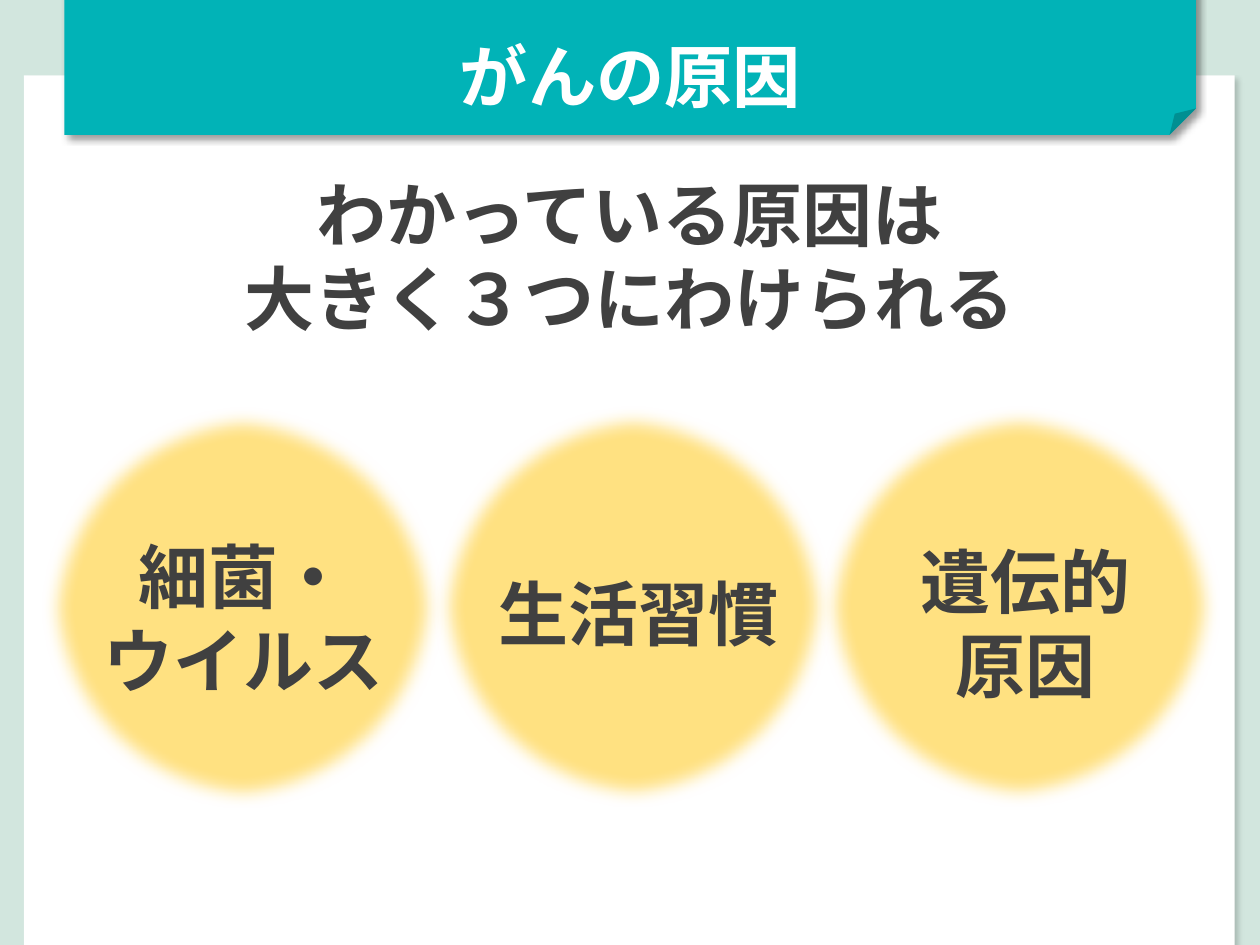
from dataclasses import dataclass

from lxml import etree
from pptx import Presentation
from pptx.dml.color import RGBColor
from pptx.enum.lang import MSO_LANGUAGE_ID
from pptx.enum.shapes import MSO_SHAPE
from pptx.enum.text import MSO_AUTO_SIZE, PP_ALIGN
from pptx.oxml.ns import qn
from pptx.util import Cm, Pt

RECTANGLE = MSO_SHAPE.RECTANGLE
FOLDED_CORNER = MSO_SHAPE.FOLDED_CORNER
OVAL = MSO_SHAPE.OVAL
CENTER = PP_ALIGN.CENTER
FIT_TO_TEXT = MSO_AUTO_SIZE.SHAPE_TO_FIT_TEXT
JAPANESE = MSO_LANGUAGE_ID.JAPANESE

FONT = "TeX Gyre Adventor"
COLORS = {
    "background": "D2E6DE",
    "sheet": "FFFFFF",
    "banner": "01B3B7",
    "title": "FFFFFF",
    "text": "404040",
    "circle": "FFE181",
    "shadow": "000000",
}
CIRCLE_SIZE = 8.1
SOFT_EDGE = 10


@dataclass
class Box:
    """Position and size in centimetres."""
    left: float
    top: float
    width: float
    height: float

    def lengths(self) -> tuple:
        return Cm(self.left), Cm(self.top), Cm(self.width), Cm(self.height)


@dataclass
class Shadow:
    """Opacity in percent, blur and distance in points."""
    opacity: int
    blur: float
    distance: float


@dataclass
class Cause:
    label: str
    circle_left: float
    circle_top: float
    label_box: Box


CAUSES = [
    Cause("生活習慣", 8.71, 8.18, Box(9.65, 11.38, 6.43, 1.96)),
    Cause("細菌・\nウイルス", 0.84, 8.2, Box(1.12, 10.64, 7.57, 3.68)),
    Cause("遺伝的\n原因", 16.51, 8.18, Box(17.45, 10.74, 6.43, 3.68)),
]


def rgb(role: str) -> RGBColor:
    return RGBColor.from_string(COLORS[role])


def add_plain_shape(shapes, kind, box: Box, role: str):
    """Add a filled shape without outline or shadow."""
    shape = shapes.add_shape(kind, *box.lengths())
    shape.shadow.inherit = False
    shape.fill.solid()
    shape.fill.fore_color.rgb = rgb(role)
    shape.line.fill.background()
    return shape


def add_effect(shape, tag: str, **attributes: str):
    effects = shape._element.spPr.find(qn("a:effectLst"))
    return etree.SubElement(effects, qn(tag), attributes)


def cast_shadow(shape, shadow: Shadow) -> None:
    outer = add_effect(
        shape, "a:outerShdw",
        blurRad=str(Pt(shadow.blur)), dist=str(Pt(shadow.distance)),
        dir="2700000", algn="tl", rotWithShape="0",
    )
    color = etree.SubElement(outer, qn("a:srgbClr"), val=COLORS["shadow"])
    etree.SubElement(color, qn("a:alpha"), val=str(shadow.opacity * 1000))


def add_text(shapes, text: str, box: Box, size: float, role: str) -> None:
    frame = shapes.add_textbox(*box.lengths()).text_frame
    frame.word_wrap = True
    frame.auto_size = FIT_TO_TEXT
    frame.text = text
    for paragraph in frame.paragraphs:
        paragraph.alignment = CENTER
        for run in paragraph.runs:
            font = run.font
            font.size = Pt(size)
            font.bold = True
            font.name = FONT
            font.language_id = JAPANESE
            font.color.rgb = rgb(role)
            etree.SubElement(run._r.get_or_add_rPr(), qn("a:ea"), typeface=FONT)


def add_cause(slide, cause: Cause) -> None:
    """Group a soft-edged circle with its label."""
    shapes = slide.shapes.add_group_shape().shapes
    circle_box = Box(cause.circle_left, cause.circle_top, CIRCLE_SIZE, CIRCLE_SIZE)
    circle = add_plain_shape(shapes, OVAL, circle_box, "circle")
    add_effect(circle, "a:softEdge", rad=str(Pt(SOFT_EDGE)))
    add_text(shapes, cause.label, cause.label_box, 40, "text")


def main() -> None:
    presentation = Presentation()
    presentation.slide_width = Cm(25.4)
    presentation.slide_height = Cm(19.05)
    slide = presentation.slides.add_slide(presentation.slide_layouts[6])
    slide.background.fill.solid()
    slide.background.fill.fore_color.rgb = rgb("background")

    sheet = add_plain_shape(slide.shapes, RECTANGLE, Box(0.48, 1.52, 24.41, 17.96), "sheet")
    cast_shadow(sheet, Shadow(18, 3, 4))
    banner = add_plain_shape(slide.shapes, FOLDED_CORNER, Box(1.3, -0.48, 22.81, 3.2), "banner")
    cast_shadow(banner, Shadow(40, 4, 3))

    add_text(slide.shapes, "がんの原因", Box(0.91, 0.56, 23.6, 1.96), 39, "title")
    add_text(slide.shapes, "わかっている原因は\n大きく３つにわけられる",
             Box(2.11, 3.33, 21.16, 3.68), 40, "text")
    for cause in CAUSES:
        add_cause(slide, cause)

    presentation.save("out.pptx")


if __name__ == "__main__":
    main()
